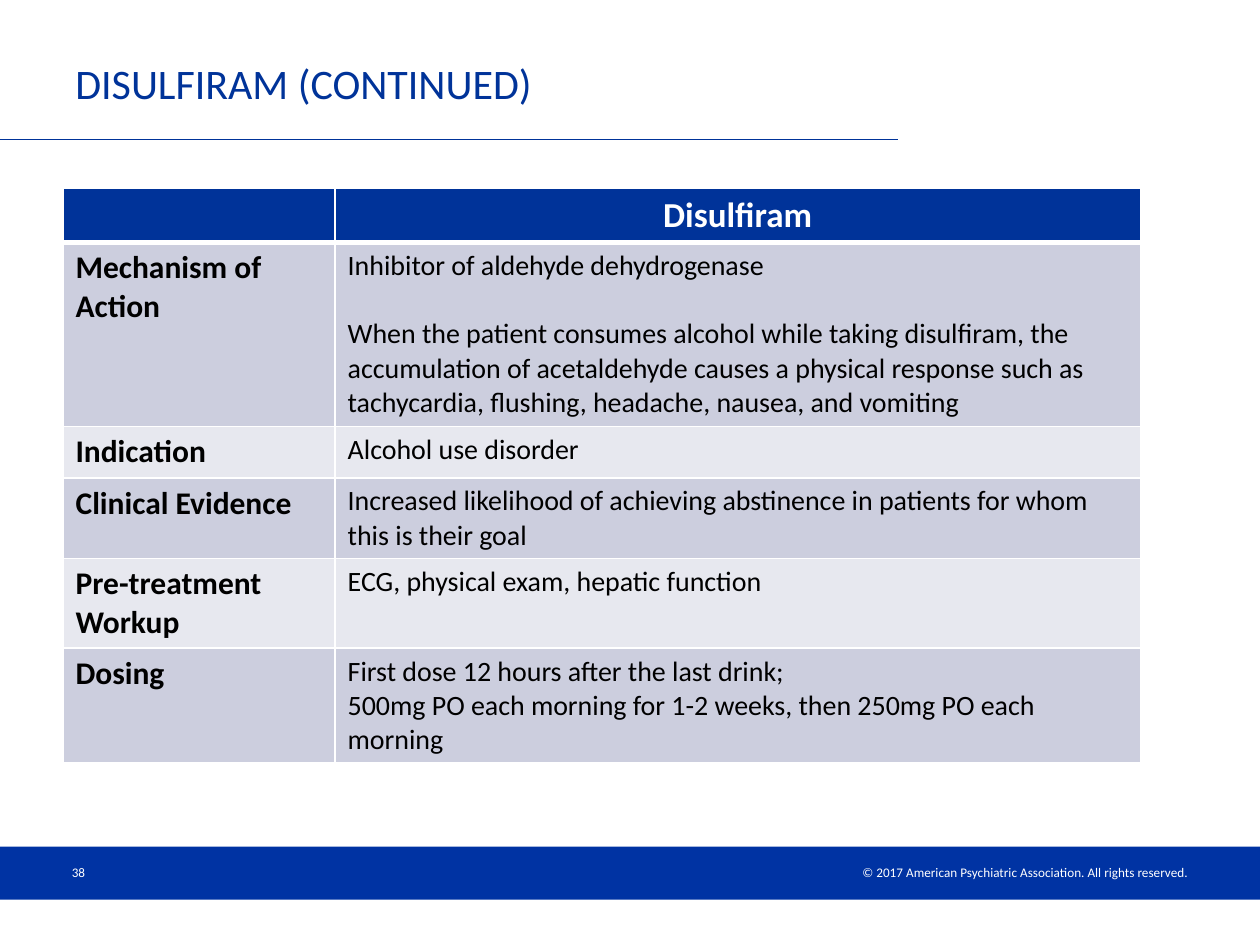
from lxml.etree import SubElement
from pptx import Presentation
from pptx.dml.color import RGBColor
from pptx.enum.shapes import MSO_CONNECTOR, MSO_SHAPE
from pptx.enum.text import MSO_ANCHOR, PP_ALIGN
from pptx.oxml.ns import qn
from pptx.util import Inches, Pt

NAVY, WHITE, BLACK = "003399", "FFFFFF", "000000"
BANDS = ["CCCEDE", "E7E8EF"]


def color(value):
    return RGBColor.from_string(value)


def write(text_frame, paragraphs, size, text_color, bold=False, align=PP_ALIGN.LEFT, gap=0):
    text_frame.word_wrap = True
    for index, text in enumerate(paragraphs):
        paragraph = text_frame.paragraphs[0] if index == 0 else text_frame.add_paragraph()
        paragraph.text = text
        paragraph.alignment = align
        if index:
            paragraph.space_before = Pt(gap)
        font_format = {"name": "Calibri", "size": Pt(size), "bold": bold}
        for name, value in font_format.items():
            setattr(paragraph.font, name, value)
        paragraph.font.color.rgb = color(text_color)


presentation = Presentation()
presentation.slide_width, presentation.slide_height = Inches(10), Inches(7.5)
slide = presentation.slides.add_slide(presentation.slide_layouts[6])

# Footer band
band = slide.shapes.add_shape(MSO_SHAPE.RECTANGLE, 0, Inches(6.72), Inches(10), Inches(0.42))
band.shadow.inherit = False
band.fill.solid()
band.fill.fore_color.rgb = color("0033A3")
band.line.fill.background()

# Rule under the title
rule = slide.shapes.add_connector(MSO_CONNECTOR.STRAIGHT, 0, Inches(1.11), Inches(7.13), Inches(1.11))
rule.line.color.rgb = color(NAVY)
rule.line.width = Pt(0.75)
SubElement(rule._element.spPr, qn("a:effectLst"))

# Copyright, page number and title
labels = [
    ("© 2017 American Psychiatric Association. All rights reserved.\u00a0",
     (5.18, 6.81, 4.37, 0.23), 0.1, 7.5, WHITE, PP_ALIGN.RIGHT),
    ("38", (0.5, 6.72, 2.33, 0.4), 0.07, 7.5, WHITE, PP_ALIGN.LEFT),
    ("DISULFIRAM (CONTINUED)", (0.5, 0.34, 6.63, 0.64), 0.1, 24, NAVY, PP_ALIGN.LEFT),
]
for text, box, inset, size, text_color, align in labels:
    text_box = slide.shapes.add_textbox(*[Inches(length) for length in box])
    text_frame = text_box.text_frame
    text_frame.vertical_anchor = MSO_ANCHOR.MIDDLE
    text_frame.margin_left = text_frame.margin_right = Inches(inset)
    write(text_frame, [text], size, text_color, align=align)

# Drug profile: row heading, paragraphs, space between paragraphs, row height
profile = [
    ("Mechanism of Action",
     ["Inhibitor of aldehyde dehydrogenase",
      "When the patient consumes alcohol while taking disulfiram, the accumulation of "
      "acetaldehyde causes a physical response such as tachycardia, flushing, headache, "
      "nausea, and vomiting"], 19.5, 1.46),
    ("Indication", ["Alcohol use disorder"], 0, 0.41),
    ("Clinical Evidence",
     ["Increased likelihood of achieving abstinence in patients for whom this is their goal"], 0, 0.64),
    ("Pre-treatment Workup", ["ECG, physical exam, hepatic function"], 0, 0.71),
    ("Dosing",
     ["First dose 12 hours after the last drink;",
      "500mg PO each morning for 1-2 weeks, then 250mg PO each morning"], 0, 0.91),
]
heights = [0.43] + [row[3] for row in profile]
table = slide.shapes.add_table(len(heights), 2, Inches(0.5), Inches(1.49),
                               Inches(8.55), Inches(sum(heights))).table
for column, width in zip(table.columns, [2.16, 6.39]):
    column.width = Inches(width)

# Cell borders and fills, with a heavy line below the header
for row_index, height in enumerate(heights):
    table.rows[row_index].height = Inches(height)
    for cell in table.rows[row_index].cells:
        widths = {"a:lnL": 1, "a:lnR": 1,
                  "a:lnT": 3 if row_index == 1 else 1,
                  "a:lnB": 3 if row_index == 0 else 1}
        properties = cell._tc.get_or_add_tcPr()
        for tag, width in widths.items():
            border = SubElement(properties, qn(tag), w=str(Pt(width)))
            SubElement(SubElement(border, qn("a:solidFill")), qn("a:srgbClr"), val=WHITE)
        cell.fill.solid()
        cell.fill.fore_color.rgb = color(BANDS[(row_index - 1) % 2] if row_index else NAVY)

# Table text
write(table.cell(0, 1).text_frame, ["Disulfiram"], 20, WHITE, bold=True, align=PP_ALIGN.CENTER)
for row_index, (heading, paragraphs, gap, _) in enumerate(profile, start=1):
    write(table.cell(row_index, 0).text_frame, [heading], 18, BLACK, bold=True)
    write(table.cell(row_index, 1).text_frame, paragraphs, 16, BLACK, gap=gap)

presentation.save("out.pptx")
